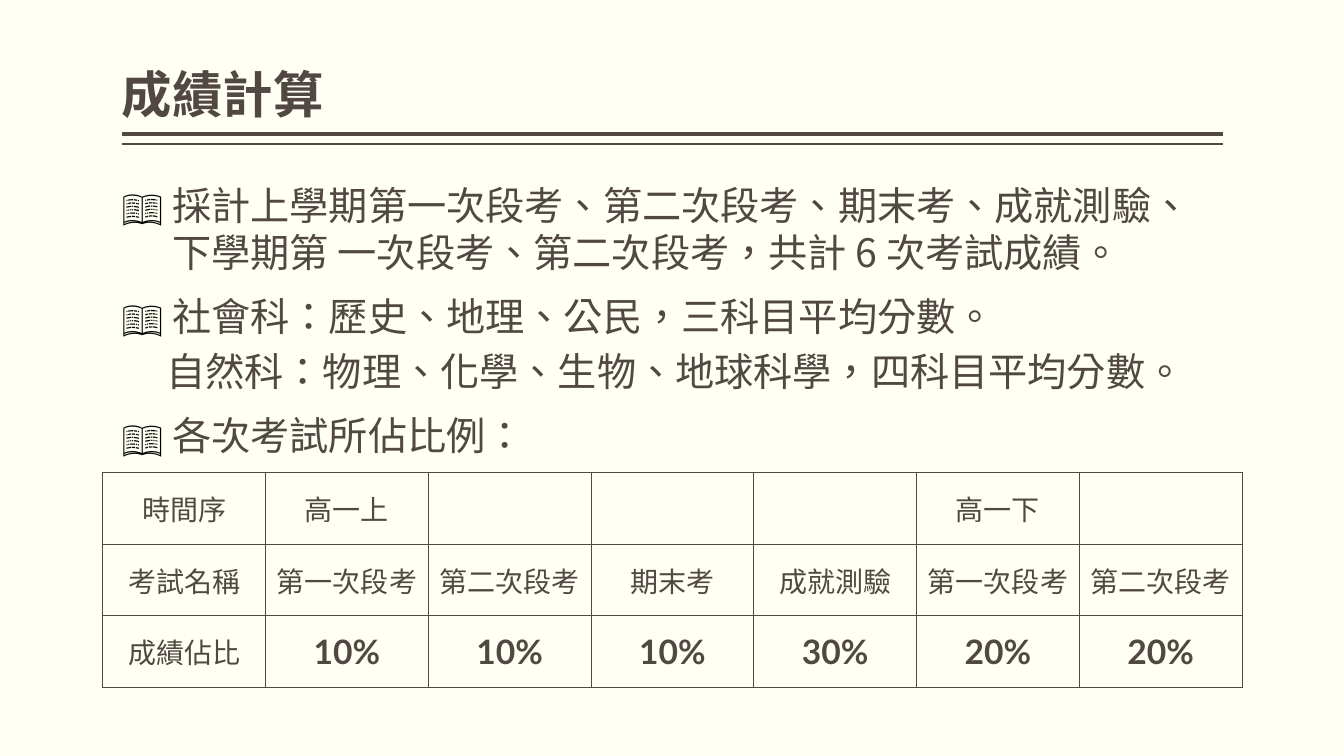
from lxml import etree
from pptx import Presentation
from pptx.dml.color import RGBColor
from pptx.enum.shapes import MSO_CONNECTOR
from pptx.enum.text import MSO_ANCHOR, PP_ALIGN
from pptx.oxml.ns import qn
from pptx.util import Inches, Pt

COLORS = {"paper": "FFFFF3", "ink": "514843", "bullet": "000000"}
CJK_FONT = "Noto Sans CJK TC"
LEFT, WIDTH = 1.21, 10.92


def style_runs(paragraph, size, bold=False, latin=CJK_FONT):
    for run in paragraph.runs:
        run.font.size = Pt(size)
        run.font.bold = bold
        run.font.name = latin
        run.font.color.rgb = RGBColor.from_string(COLORS["ink"])
        properties = run.font._element
        properties.set("lang", "zh-TW")
        east_asian = etree.Element(qn("a:ea"), typeface=CJK_FONT)
        properties.find(qn("a:latin")).addnext(east_asian)


def add_solid_fill(parent, color):
    fill = etree.SubElement(parent, qn("a:solidFill"))
    etree.SubElement(fill, qn("a:srgbClr"), val=COLORS[color])


prs = Presentation()
prs.slide_width, prs.slide_height = Inches(13.33), Inches(7.5)
slide = prs.slides.add_slide(prs.slide_layouts[5])
slide.background.fill.solid()
slide.background.fill.fore_color.rgb = RGBColor.from_string(COLORS["paper"])

# Double rule under the title
for y, weight in [(1.33, 3), (1.43, 1)]:
    rule = slide.shapes.add_connector(
        MSO_CONNECTOR.STRAIGHT, Inches(LEFT + WIDTH), Inches(y), Inches(LEFT), Inches(y))
    rule.line.color.rgb = RGBColor.from_string(COLORS["ink"])
    rule.line.width = Pt(weight)
    etree.SubElement(rule._element.spPr, qn("a:effectLst"))

title = slide.shapes.title
title.left, title.top = Inches(LEFT), Inches(0.08)
title.width, title.height = Inches(WIDTH), Inches(1.2)
title.text_frame.text = "成績計算"
title.text_frame.vertical_anchor = MSO_ANCHOR.BOTTOM
heading = title.text_frame.paragraphs[0]
heading.alignment = PP_ALIGN.LEFT
heading.line_spacing = 0.9
style_runs(heading, 36, bold=True)

rules = slide.shapes.add_textbox(Inches(LEFT), Inches(1.75), Inches(WIDTH), Inches(5.67))
rules.text_frame.word_wrap = True
for frame in (title.text_frame, rules.text_frame):
    frame.margin_left = frame.margin_right = 0
    frame.margin_top = frame.margin_bottom = Inches(0.05)

# Text, space after, bulleted
grading_rules = [
    ("採計上學期第一次段考、第二次段考、期末考、成就測驗、下學期第 一次段考、第二次段考，共計 6 次考試成績。", 12, True),
    ("社會科：歷史、地理、公民，三科目平均分數。", 6, True),
    ("自然科：物理、化學、生物、地球科學，四科目平均分數。", 12, False),
    ("各次考試所佔比例：", 12, True),
]
rules.text_frame.text = "\n".join(text for text, _, _ in grading_rules)
for paragraph, (_, space_after, bulleted) in zip(rules.text_frame.paragraphs, grading_rules):
    paragraph.line_spacing = 1.0
    paragraph.space_after = Pt(space_after)
    style_runs(paragraph, 28)
    properties = paragraph._p.get_or_add_pPr()
    properties.set("marL", str(Inches(0.5 if bulleted else 0.44)))
    properties.set("indent", str(Inches(-0.5 if bulleted else 0)))
    if bulleted:
        bullet_color = etree.SubElement(properties, qn("a:buClr"))
        etree.SubElement(bullet_color, qn("a:srgbClr"), val=COLORS["bullet"])
        etree.SubElement(properties, qn("a:buFont"), typeface=CJK_FONT)
        etree.SubElement(properties, qn("a:buChar"), char="📖")

exam_weights = [
    ["時間序", "高一上", "", "", "", "高一下", ""],
    ["考試名稱", "第一次段考", "第二次段考", "期末考", "成就測驗", "第一次段考", "第二次段考"],
    ["成績佔比", "10%", "10%", "10%", "30%", "20%", "20%"],
]
weights = slide.shapes.add_table(
    3, 7, Inches(1.02), Inches(4.69), Inches(11.3), Inches(2.13)).table
weights.first_row = weights.horz_banding = False
for r, row in enumerate(exam_weights):
    for c, text in enumerate(row):
        cell = weights.cell(r, c)
        cell.text_frame.text = text
        cell.vertical_anchor = MSO_ANCHOR.MIDDLE
        cell.margin_left = cell.margin_right = Inches(0.05)
        paragraph = cell.text_frame.paragraphs[0]
        paragraph.alignment = PP_ALIGN.CENTER
        is_percent = text.endswith("%")
        style_runs(paragraph, 24 if is_percent else 20, bold=is_percent, latin="Lato")
        cell_properties = cell._tc.get_or_add_tcPr()
        for side in ("a:lnL", "a:lnR", "a:lnT", "a:lnB"):
            border = etree.SubElement(cell_properties, qn(side), w=str(Pt(1)))
            add_solid_fill(border, "ink")
        cell.fill.background()

prs.save("out.pptx")
